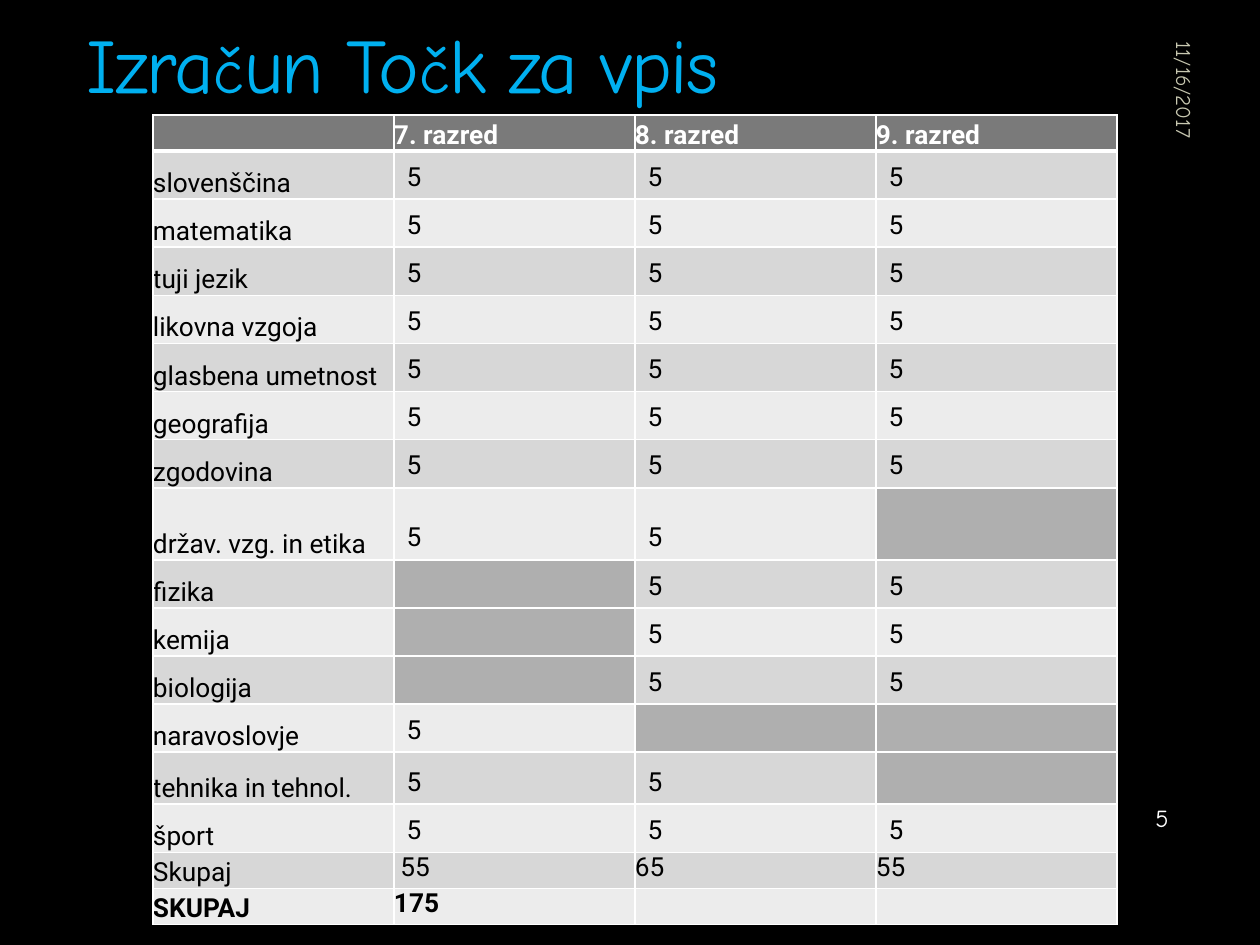
from lxml import etree
from pptx import Presentation
from pptx import util as u
from pptx.dml.color import RGBColor
from pptx.enum import text
from pptx.oxml import parse_xml
from pptx.oxml.ns import nsdecls

BLACK = RGBColor(0x00, 0x00, 0x00)
WHITE = RGBColor(0xFF, 0xFF, 0xFF)
BLUE = RGBColor(0x00, 0xB0, 0xF0)
RED = RGBColor(0xB8, 0x23, 0x29)
SAND = RGBColor(0xC8, 0xC8, 0xB1)
HEAD = RGBColor(0x7A, 0x7A, 0x7A)
BANDS = (RGBColor(0xD7, 0xD7, 0xD7), RGBColor(0xEC, 0xEC, 0xEC))
NONE = RGBColor(0xAF, 0xAF, 0xAF)

TITLE = [("Izra", 44), ("č", 36), ("un To", 44), ("č", 36), ("k za vpis", 44)]
GRADES = ("7. razred", "8. razred", "9. razred")
# One mark per grade; "-" means the subject is not taught that year.
MARKS = {
    "slovenščina": "555",
    "matematika": "555",
    "tuji jezik": "555",
    "likovna vzgoja": "555",
    "glasbena umetnost": "555",
    "geografija": "555",
    "zgodovina": "555",
    "držav. vzg. in etika": "55-",
    "fizika": "-55",
    "kemija": "-55",
    "biologija": "-55",
    "naravoslovje": "5--",
    "tehnika in tehnol.": "55-",
    "šport": "555",
}
SUMS = [("Skupaj", " 55", "65", "55"), ("SKUPAJ", "175", "", "")]
TALL = {"držav. vzg. in etika": 72, "tehnika in tehnol.": 52}
COL, ROW, LOW = 241, 48, 36


def px(n):
    return u.Emu(round(n * 914400 / 126))


def line(tag, color, points, alpha=100):
    return parse_xml(
        f'<a:{tag} {nsdecls("a")} w="{round(points * 12700)}"><a:solidFill>'
        f'<a:srgbClr val="{color}"><a:alpha val="{alpha * 1000}"/></a:srgbClr>'
        f'</a:solidFill></a:{tag}>')


class Deck:
    hand = "Comic Neue"
    sans = "Roboto"

    def __init__(self):
        self.prs = Presentation()
        self.prs.slide_width, self.prs.slide_height = px(1260), px(945)
        self.slide = self.prs.slides.add_slide(self.prs.slide_layouts[5])
        back = self.slide.background.fill
        back.solid()
        back.fore_color.rgb = BLACK

    def style(self, run, face, size, color, bold=False):
        font = run.font
        font.name, font.size, font.bold = face, u.Pt(size), bold
        font.color.rgb = color

    def place(self, shape, box):
        shape.left, shape.top, shape.width, shape.height = map(px, box)

    def title(self, parts, box):
        shape = self.slide.shapes.title
        self.place(shape, box)
        frame = shape.text_frame
        frame.auto_size = text.MSO_AUTO_SIZE.NONE
        frame.vertical_anchor = text.MSO_ANCHOR.BOTTOM
        para = frame.paragraphs[0]
        para.alignment = text.PP_ALIGN.LEFT
        for word, size in parts:
            run = para.add_run()
            run.text = word
            self.style(run, self.hand, size, BLUE)
            props = run.font._element
            props.set("spc", "-100")
            props.insert(0, line("ln", RED, 0.25, 25))

    def label(self, words, box, size, color, align, turn=0):
        shape = self.slide.shapes.add_textbox(*map(px, box))
        shape.rotation = turn
        frame = shape.text_frame
        frame.word_wrap = True
        frame.vertical_anchor = text.MSO_ANCHOR.MIDDLE
        frame.text = words
        para = frame.paragraphs[0]
        para.alignment = align
        self.style(para.runs[0], self.hand, size, color)

    def cell(self, cell, words, fill, color=BLACK, bold=False,
             inset=False, low=True, top=1, bottom=1):
        """Fill one cell; low sets the text on the bottom with loose spacing."""
        cell.margin_left = cell.margin_right = u.Inches(0.1 * inset)
        cell.margin_top = cell.margin_bottom = u.Inches(0.05 * inset)
        props = cell._tc.get_or_add_tcPr()
        for side, width in zip("LRTB", (1, 1, top, bottom)):
            props.append(line("ln" + side, WHITE, width))
        cell.fill.solid()
        cell.fill.fore_color.rgb = fill
        para = cell.text_frame.paragraphs[0]
        if not words:
            etree.SubElement(para._p, para._p.tag + "x").getparent().remove(para._p[-1])
            para._p.get_or_add_endParaRPr().set("sz", "1500")
            return
        para.text = words
        if low:
            cell.vertical_anchor = text.MSO_ANCHOR.BOTTOM
            para.line_spacing, para.space_after = 1.15, u.Pt(10)
        self.style(para.runs[0], self.sans, 15, color, bold)

    def table(self, left, top):
        rows = len(MARKS) + len(SUMS) + 1
        tall = [LOW] + [TALL.get(name, ROW) for name in MARKS] + [LOW] * len(SUMS)
        grid = self.slide.shapes.add_table(
            rows, 4, px(left), px(top), px(COL * 4), px(sum(tall))).table
        grid.horz_banding = False
        for row, height in zip(grid.rows, tall):
            row.height = px(height)
        for c, name in enumerate(("",) + GRADES):
            self.cell(grid.cell(0, c), name, HEAD, WHITE, True, bottom=3)
        for r, (name, marks) in enumerate(MARKS.items(), 1):
            band, edge = BANDS[(r - 1) % 2], 3 if r == 1 else 1
            self.cell(grid.cell(r, 0), name, band, top=edge)
            for c, mark in enumerate(marks, 1):
                free = mark == "-"
                self.cell(grid.cell(r, c), "" if free else mark,
                          NONE if free else band, inset=True, top=edge)
        for r, sums in enumerate(SUMS, len(MARKS) + 1):
            for c, words in enumerate(sums):
                self.cell(grid.cell(r, c), words, BANDS[(r - 1) % 2],
                          bold=r == rows - 1, low=c == 0)


def main():
    deck = Deck()
    deck.title(TITLE, (74, -43, 1166, 158))
    deck.table(153, 115)
    deck.label("11/16/2017", (1046, 141, 277, 53), 12, SAND,
               text.PP_ALIGN.LEFT, 90)
    deck.label("5", (1120, 782, 84, 72), 14, WHITE, text.PP_ALIGN.CENTER)
    deck.prs.save("out.pptx")


if __name__ == "__main__":
    main()
